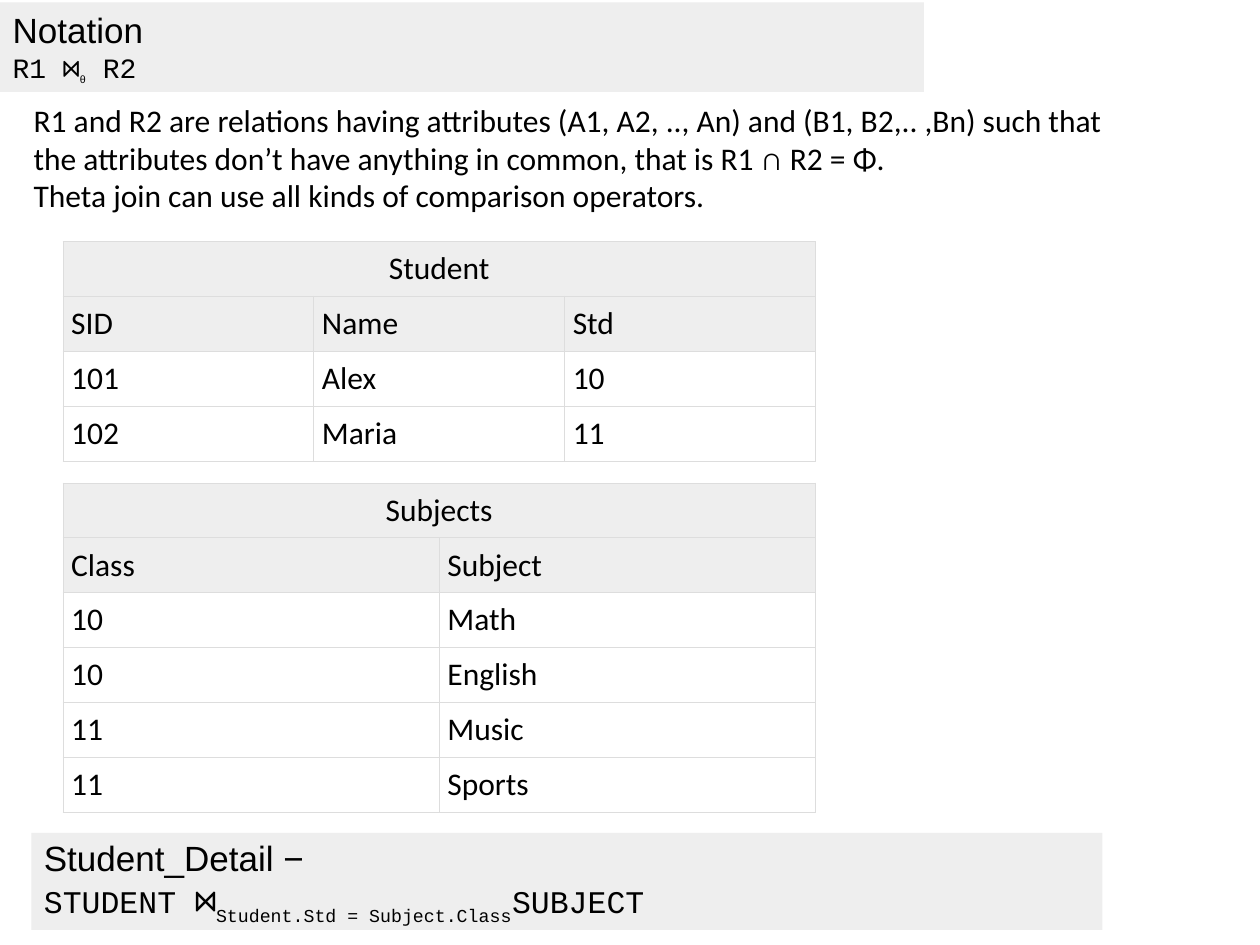
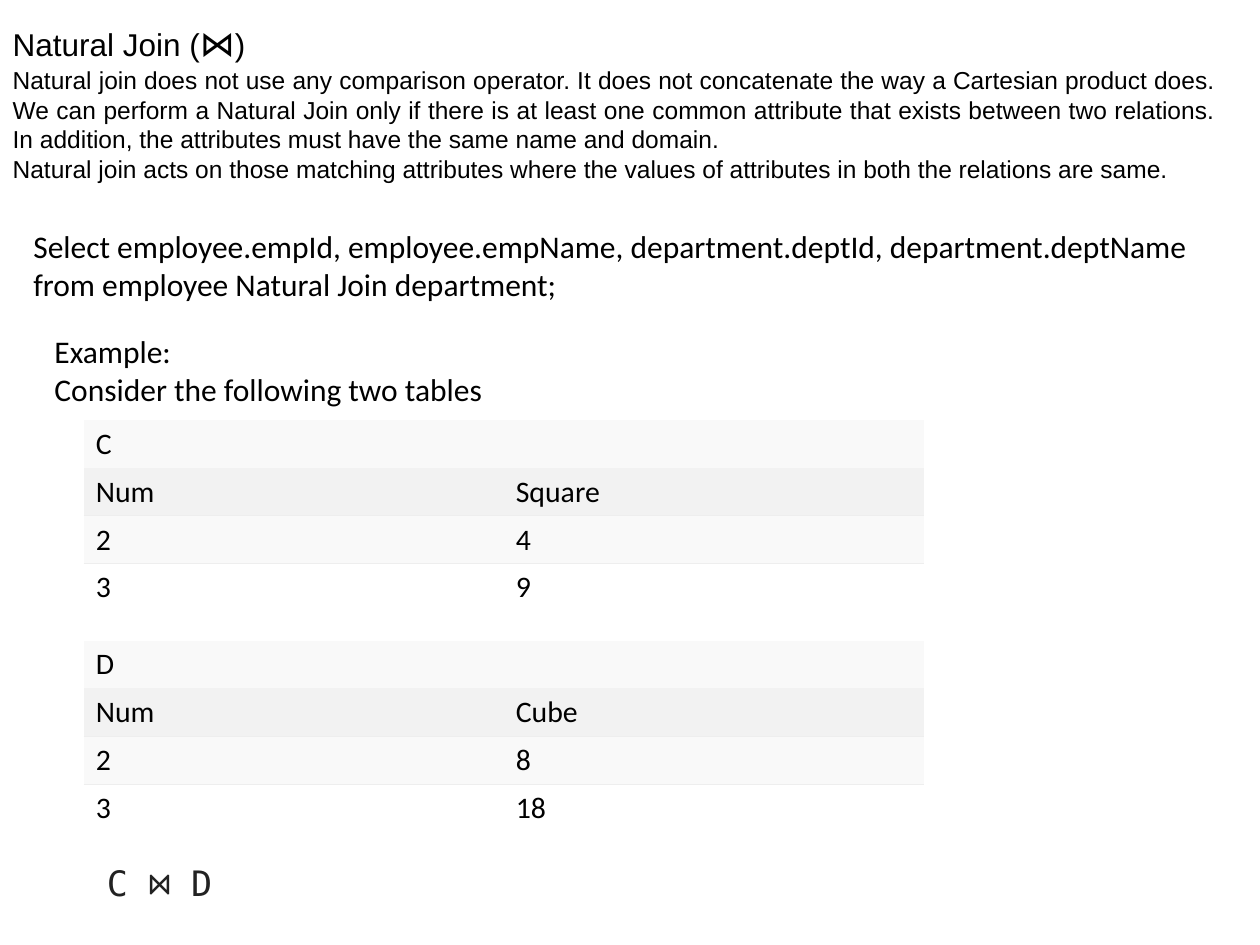
from dataclasses import dataclass
from typing import NamedTuple, Optional

from lxml.etree import SubElement
from pptx import Presentation
from pptx.dml.color import RGBColor
from pptx.enum.shapes import MSO_SHAPE
from pptx.enum.text import MSO_ANCHOR, MSO_AUTO_SIZE, PP_ALIGN
from pptx.oxml.ns import qn
from pptx.util import Pt


# Theme: every colour, font and type size
@dataclass(frozen=True)
class Theme:
    text: str = "000000"
    formula: str = "222222"
    band: str = "EEEEEE"
    grid_line: str = "DDDDDD"
    row_line: str = "EEEEEE"
    stripe: str = "F9F9F9"
    header: str = "F2F2F2"
    white: str = "FFFFFF"
    sans: str = "Arial"
    body: str = "Calibri"
    code: str = "Courier New"
    mono: str = "DejaVu Sans Mono"
    heading_size: float = 20
    text_size: float = 18
    striped_size: float = 17
    notation_size: float = 16
    note_size: float = 14
    theta_size: float = 10.5
    line_width: float = 0.6


THEME = Theme()


# Content types
class Frame(NamedTuple):
    left: float
    top: float
    width: float
    height: float

    def points(self) -> tuple:
        return tuple(Pt(length) for length in self)


class Span(NamedTuple):
    text: str
    size: float = THEME.text_size
    font: str = THEME.body
    color: str = THEME.text
    subscript: bool = False


@dataclass(frozen=True)
class TextBlock:
    frame: Frame
    paragraphs: list  # each paragraph is a list of spans
    fill: Optional[str] = None
    anchor: MSO_ANCHOR = MSO_ANCHOR.TOP
    alignment: PP_ALIGN = PP_ALIGN.LEFT
    margin_top: float = 3.6


@dataclass(frozen=True)
class TableStyle:
    top_fills: tuple  # fills of the first rows; later rows stay clear
    line_color: str
    full_grid: bool
    caption_alignment: PP_ALIGN
    size: float
    margin_x: float
    margin_y: float
    row_height: float


@dataclass(frozen=True)
class RelationTable:
    left: float
    top: float
    width: float
    caption: str
    rows: list
    style: TableStyle


GRID = TableStyle((THEME.band, THEME.band), THEME.grid_line, True,
                  PP_ALIGN.CENTER, THEME.text_size, 4.7, 4.7, 31.2)
STRIPED = TableStyle((THEME.stripe, THEME.header, THEME.stripe, THEME.white),
                     THEME.row_line, False, PP_ALIGN.LEFT,
                     THEME.striped_size, 6.8, 3.3, 27.36)


# Drawing functions
def format_run(run, span: Span) -> None:
    run.font.size = Pt(span.size)
    run.font.name = span.font
    run.font.bold = False
    run.font.color.rgb = RGBColor.from_string(span.color)
    if span.subscript:
        run._r.get_or_add_rPr().set("baseline", "-30000")


def write_paragraph(paragraph, spans: list, alignment: PP_ALIGN) -> None:
    paragraph.alignment = alignment
    paragraph.space_before = Pt(0)
    paragraph.text = spans[0].text
    for span in spans[1:]:
        paragraph.add_run().text = span.text
    for run, span in zip(paragraph.runs, spans):
        format_run(run, span)


def fill_block(shape, block: TextBlock) -> None:
    shape.left, shape.top, shape.width, shape.height = block.frame.points()
    if block.fill:
        shape.fill.solid()
        shape.fill.fore_color.rgb = RGBColor.from_string(block.fill)
    text_frame = shape.text_frame
    text_frame.word_wrap = True
    text_frame.auto_size = MSO_AUTO_SIZE.NONE
    text_frame.vertical_anchor = block.anchor
    text_frame.margin_top = Pt(block.margin_top)
    for index, spans in enumerate(block.paragraphs):
        paragraph = text_frame.add_paragraph() if index else text_frame.paragraphs[0]
        write_paragraph(paragraph, spans, block.alignment)


def fill_body(shape, block: TextBlock) -> None:
    fill_block(shape, block)
    for paragraph in shape.text_frame.paragraphs:
        properties = paragraph._p.get_or_add_pPr()
        properties.set("marL", "0")
        properties.set("indent", "0")
        SubElement(properties, qn("a:buNone"))


def add_text(slide, block: TextBlock) -> None:
    fill_block(slide.shapes.add_textbox(*block.frame.points()), block)


def add_band(slide, block: TextBlock) -> None:
    shape = slide.shapes.add_shape(MSO_SHAPE.RECTANGLE, *block.frame.points())
    shape.shadow.inherit = False
    shape.line.fill.background()
    fill_block(shape, block)


def set_borders(cell, color: str, visible_sides: str) -> None:
    properties = cell._tc.get_or_add_tcPr()
    for index, side in enumerate("LRTB"):
        line = SubElement(properties, qn(f"a:ln{side}"), w=str(Pt(THEME.line_width)))
        if side in visible_sides:
            solid = SubElement(line, qn("a:solidFill"))
            SubElement(solid, qn("a:srgbClr"), val=color)
        else:
            SubElement(line, qn("a:noFill"))
        properties.insert(index, line)  # borders come before the fill


def sides_for_row(style: TableStyle, row: int, last_row: int) -> str:
    if style.full_grid:
        return "LRTB"
    return ("T" if row >= 2 else "") + ("B" if 1 <= row < last_row else "")


def add_relation(slide, relation: RelationTable) -> None:
    style = relation.style
    column_count = len(relation.rows[0])
    contents = [[relation.caption] + [""] * (column_count - 1)] + relation.rows
    frame = Frame(relation.left, relation.top, relation.width,
                  style.row_height * len(contents))
    table = slide.shapes.add_table(len(contents), column_count, *frame.points()).table
    table.first_row = table.horz_banding = False
    table.cell(0, 0).merge(table.cell(0, column_count - 1))
    for row, texts in enumerate(contents):
        for column, text in enumerate(texts):
            cell = table.cell(row, column)
            cell.margin_left = cell.margin_right = Pt(style.margin_x)
            cell.margin_top = cell.margin_bottom = Pt(style.margin_y)
            cell.vertical_anchor = MSO_ANCHOR.MIDDLE
            if row < len(style.top_fills):
                cell.fill.solid()
                cell.fill.fore_color.rgb = RGBColor.from_string(style.top_fills[row])
            else:
                cell.fill.background()
            set_borders(cell, style.line_color, sides_for_row(style, row, len(contents) - 1))
            if text:
                alignment = PP_ALIGN.LEFT if row else style.caption_alignment
                write_paragraph(cell.text_frame.paragraphs[0],
                                [Span(text, style.size)], alignment)


def add_content_slide(presentation, title: TextBlock, body: TextBlock):
    slide = presentation.slides.add_slide(presentation.slide_layouts[1])
    fill_block(slide.shapes.title, title)
    fill_body(slide.placeholders[1], body)
    return slide


# Slide 1: theta join
def build_theta_join(presentation) -> None:
    title = TextBlock(
        Frame(0, 1.4, 528, 51.1),
        [[Span("Notation", THEME.heading_size, THEME.sans)],
         [Span("R1 ⋈", THEME.notation_size, THEME.code),
          Span("θ", THEME.theta_size, THEME.code, subscript=True),
          Span(" R2", THEME.notation_size, THEME.code)]],
        fill=THEME.band, anchor=MSO_ANCHOR.MIDDLE)
    body = TextBlock(
        Frame(12, 54, 630, 72.7),
        [[Span("R1 and R2 are relations having attributes (A1, A2, .., An) and "
               "(B1, B2,.. ,Bn) such that the attributes don’t have anything in "
               "common, that is R1 ∩ R2 = Φ.")],
         [Span("Theta join can use all kinds of comparison operators.")]])
    slide = add_content_slide(presentation, title, body)

    add_relation(slide, RelationTable(36, 138, 430, "Student", [
        ["SID", "Name", "Std"], ["101", "Alex", "10"], ["102", "Maria", "11"]], GRID))
    add_relation(slide, RelationTable(36, 276, 430, "Subjects", [
        ["Class", "Subject"], ["10", "Math"], ["10", "English"],
        ["11", "Music"], ["11", "Sports"]], GRID))

    add_band(slide, TextBlock(
        Frame(18, 476, 612, 55.4),
        [[Span("Student_Detail −", THEME.heading_size, THEME.sans)],
         [Span("STUDENT ", font=THEME.code),
          Span("⋈", THEME.heading_size, THEME.code),
          Span("Student.Std = Subject.Class", font=THEME.code, subscript=True),
          Span("SUBJECT", font=THEME.code)]],
        fill=THEME.band, anchor=MSO_ANCHOR.MIDDLE))


# Slide 2: natural join
def build_natural_join(presentation) -> None:
    title = TextBlock(
        Frame(0, 8.6, 702, 28.8),
        [[Span("Natural Join (", font=THEME.sans),
          Span("⋈", THEME.heading_size, THEME.sans),
          Span(")", font=THEME.sans)]])
    notes = [
        "Natural join does not use any comparison operator. It does not concatenate "
        "the way a Cartesian product does. We can perform a Natural Join only if there "
        "is at least one common attribute that exists between two relations. In "
        "addition, the attributes must have the same name and domain.",
        "Natural join acts on those matching attributes where the values of attributes "
        "in both the relations are same."]
    body = TextBlock(
        Frame(0, 37.4, 702, 70.6),
        [[Span(note, THEME.note_size, THEME.sans)] for note in notes],
        alignment=PP_ALIGN.JUSTIFY, margin_top=0)
    slide = add_content_slide(presentation, title, body)

    add_text(slide, TextBlock(
        Frame(12, 126, 684, 51),
        [[Span("Select employee.empId, employee.empName, department.deptId, "
               "department.deptName from employee Natural Join department;")]]))
    add_text(slide, TextBlock(
        Frame(24, 186, 444, 51),
        [[Span("Example:")], [Span("Consider the following two tables")]]))

    add_relation(slide, RelationTable(48, 240, 480, "C", [
        ["Num", "Square"], ["2", "4"], ["3", "9"]], STRIPED))
    add_relation(slide, RelationTable(48, 366, 480, "D", [
        ["Num", "Cube"], ["2", "8"], ["3", "18"]], STRIPED))

    add_text(slide, TextBlock(
        Frame(54, 492, 120, 28),
        [[Span("C ⋈ D", THEME.heading_size, THEME.mono, THEME.formula)]],
        anchor=MSO_ANCHOR.MIDDLE, margin_top=0))


def main() -> None:
    presentation = Presentation()
    presentation.slide_width, presentation.slide_height = Pt(720), Pt(540)
    build_theta_join(presentation)
    build_natural_join(presentation)
    presentation.save("out.pptx")


if __name__ == "__main__":
    main()
